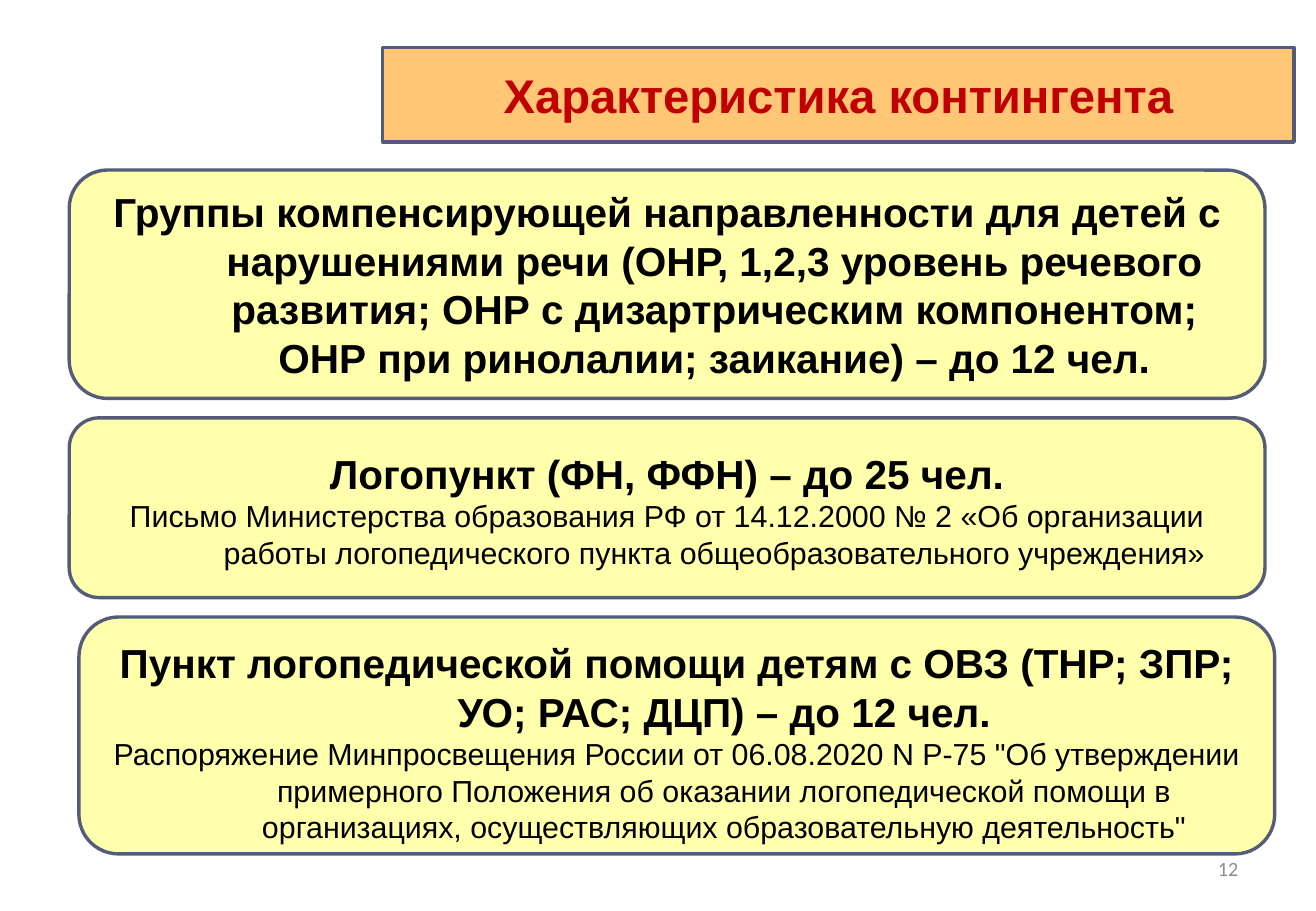
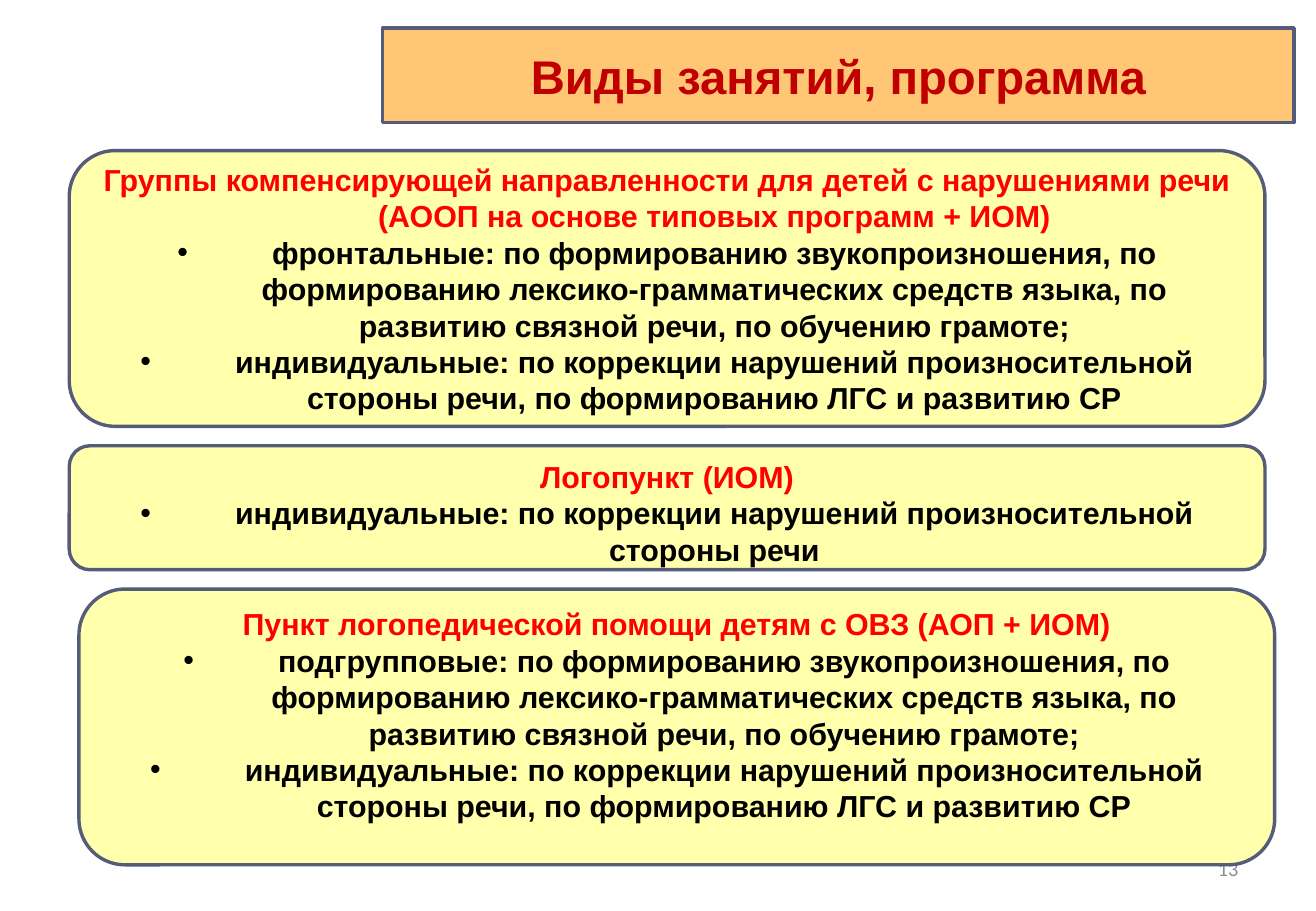
from pptx import Presentation
from pptx.dml.color import RGBColor
from pptx.enum import shapes, text
from pptx.oxml import ns, xmlchemy
from pptx.util import Inches, Pt
from lxml import etree

COLORS = {"title_fill": "FF9900", "panel_fill": "FFFF66", "outline": "545C79",
          "title": "C00000", "heading": "FF0000", "body": "000000", "number": "8C8C8C"}
TITLE_HEIGHT, TITLE_GAP, PANEL_GAP = 0.78, 0.23, 0.16
PANEL_LEFTS = (0.57, 0.57, 0.65)
HANGING = 0.78

LARGE = dict(size=24, bold=True)
SOURCE = dict(size=18)
HEADING = dict(size=18, bold=True, color="heading")
BULLET = dict(size=18, bold=True, bullet=True)

SOUND_WORK = ("по формированию звукопроизношения, по формированию лексико-грамматических "
              "средств языка, по развитию связной речи, по обучению грамоте;")
INDIVIDUAL = "индивидуальные: по коррекции нарушений произносительной стороны речи"
INDIVIDUAL_FULL = INDIVIDUAL + ", по формированию ЛГС и развитию СР"

SLIDES = [
    (12, "Характеристика контингента", 0.39, [
        (1.88, 0.05, 0.05, [
            ("Группы компенсирующей направленности для детей с нарушениями речи "
             "(ОНР, 1,2,3 уровень речевого развития; ОНР с дизартрическим компонентом; "
             "ОНР при ринолалии; заикание) – до 12 чел.", LARGE)]),
        (1.48, 0.08, 0.05, [
            ("Логопункт (ФН, ФФН) – до 25 чел.", LARGE),
            ("Письмо Министерства образования РФ от 14.12.2000 № 2 «Об организации работы "
             "логопедического пункта общеобразовательного учреждения»", SOURCE)]),
        (1.95, 0.15, 0.05, [
            ("Пункт логопедической помощи детям с ОВЗ (ТНР; ЗПР; УО; РАС; ДЦП) – до 12 чел.",
             LARGE),
            ("Распоряжение Минпросвещения России от 06.08.2020 N Р-75 \"Об утверждении "
             "примерного Положения об оказании логопедической помощи в организациях, "
             "осуществляющих образовательную деятельность\"", SOURCE)])]),
    (13, "Виды занятий, программа", 0.23, [
        (2.27, 0.05, 0.05, [
            ("Группы компенсирующей направленности для детей с нарушениями речи "
             "(АООП на основе типовых программ + ИОМ)", HEADING),
            ("фронтальные: " + SOUND_WORK, BULLET),
            (INDIVIDUAL_FULL, BULLET)]),
        (1.02, 0.13, 0.05, [
            ("Логопункт (ИОМ)", HEADING),
            (INDIVIDUAL, BULLET)]),
        (2.27, 0.05, 0.25, [
            ("Пункт логопедической помощи детям с ОВЗ (АОП + ИОМ)", HEADING),
            ("подгрупповые: " + SOUND_WORK, BULLET),
            (INDIVIDUAL_FULL, BULLET)])]),
]


def add_text(frame, words, size=18, bold=False, color="body", font="Arial",
             align=text.PP_ALIGN.CENTER, hanging=0, bullet=False):
    paragraph = frame.add_paragraph() if frame.text else frame.paragraphs[0]
    paragraph.alignment = align
    if hanging:
        properties = paragraph._p.get_or_add_pPr()
        properties.set("marL", str(Inches(hanging)))
        properties.set("indent", str(-Inches(hanging)))
        if bullet:
            etree.SubElement(properties, ns.qn("a:buFont")).set("typeface", "Arial")
            etree.SubElement(properties, ns.qn("a:buChar")).set("char", "•")
    run = paragraph.add_run()
    run.text = words
    run.font.name, run.font.size, run.font.bold = font, Pt(size), bold
    run.font.color.rgb = RGBColor.from_string(COLORS[color])


def paint_panel(panel, fill):
    panel.fill.solid()
    panel.fill.fore_color.rgb = RGBColor.from_string(COLORS[fill])
    tint = panel.fill._xPr.find(".//" + ns.qn("a:srgbClr"))
    etree.SubElement(tint, ns.qn("a:alpha")).set("val", "54000")
    panel.line.color.rgb = RGBColor.from_string(COLORS["outline"])
    panel.line.width = Pt(2)
    panel.text_frame.word_wrap = True
    panel.text_frame.auto_size = text.MSO_AUTO_SIZE.NONE
    panel.text_frame.vertical_anchor = text.MSO_ANCHOR.MIDDLE


prs = Presentation()
prs.slide_width, prs.slide_height = Inches(10.83), Inches(7.5)

for number, heading, title_top, panels in SLIDES:
    slide = prs.slides.add_slide(prs.slide_layouts[5])

    title = slide.shapes.title
    title.left, title.top = Inches(3.15), Inches(title_top)
    title.width, title.height = Inches(7.5), Inches(TITLE_HEIGHT)
    outline = etree.SubElement(title._element.spPr, ns.qn("a:prstGeom"))
    outline.set("prst", "roundRect")
    etree.SubElement(outline, ns.qn("a:avLst"))
    paint_panel(title, "title_fill")
    add_text(title.text_frame, heading, size=28, bold=True, color="title")

    page_number = slide.shapes.add_textbox(Inches(7.76), Inches(6.95), Inches(2.53), Inches(0.4))
    page_number.text_frame.word_wrap = True
    page_number.text_frame.vertical_anchor = text.MSO_ANCHOR.MIDDLE
    add_text(page_number.text_frame, str(number), size=12, color="number", font="Calibri",
             align=text.PP_ALIGN.RIGHT)

    top = title_top + TITLE_HEIGHT + TITLE_GAP
    for left, (height, inset_top, inset_bottom, lines) in zip(PANEL_LEFTS, panels):
        group = slide.shapes.add_shape(shapes.MSO_SHAPE.ROUNDED_RECTANGLE, Inches(left),
                                       Inches(top), Inches(9.84), Inches(height))
        group.shadow.inherit = False
        paint_panel(group, "panel_fill")
        group.text_frame.margin_top = Inches(inset_top)
        group.text_frame.margin_bottom = Inches(inset_bottom)
        for words, style in lines:
            add_text(group.text_frame, words, hanging=HANGING, **style)
        top += height + PANEL_GAP

prs.save("out.pptx")
